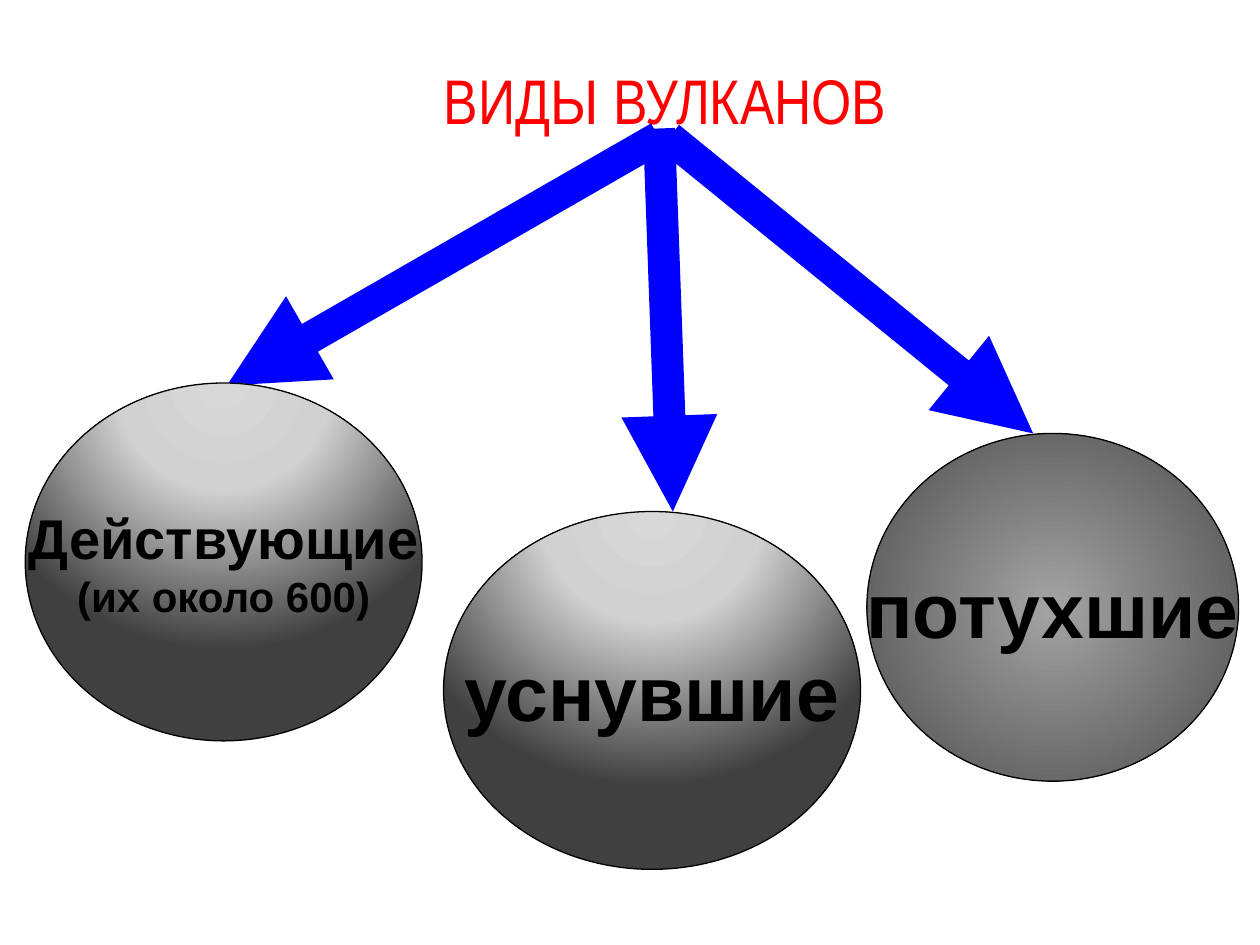
from lxml import etree
from pptx import Presentation
from pptx import util as u
from pptx.dml.color import RGBColor
from pptx.enum import shapes, text
from pptx.oxml import parse_xml
from pptx.oxml.ns import qn, nsdecls

TITLE = "ВИДЫ ВУЛКАНОВ"
BLUE, RED, BLACK = "0000FF", "FF0000", "000000"

# Gradients: stops (percent, colour) and focus (left, top, right, bottom)
GLOSS = ([(0, "D8D8D8"), (40, "D1D1D1"), (100, "404040")], (50, -80, 50, 180))
DULL = ([(0, "A4A4A4"), (100, "4C4C4C")], (50, 50, 50, 50))

# Each kind: place, gradient, lines of text with size, arrow from and to
KINDS = [
    ((0.2, 3.04, 3.15, 2.84), GLOSS,
     [("Действующие", 32), ("(их около 600)", 24)], (5.23, 1.09, 1.8, 3.06)),
    ((3.52, 4.06, 3.31, 2.84), GLOSS,
     [("уснувшие", 44)], (5.23, 1.02, 5.34, 4.06)),
    ((6.88, 3.44, 2.95, 2.76), DULL,
     [("потухшие", 44)], (5.31, 1.09, 8.2, 3.44)),
]


def rgb(code):
    return RGBColor.from_string(code)


def inches(nums):
    return [u.Inches(n) for n in nums]


def write(frame, lines, face, color, bold=None):
    frame.word_wrap = False
    frame.text = "\n".join(line for line, size in lines)
    for para, (line, size) in zip(frame.paragraphs, lines):
        para.alignment = text.PP_ALIGN.CENTER
        font = para.runs[0].font
        font.name, font.size, font.bold = face, u.Pt(size), bold
        font.color.rgb = rgb(color)


def shade(shape, stops, focus):
    marks = "".join(f'<a:gs pos="{pos * 1000}"><a:srgbClr val="{code}"/></a:gs>'
                    for pos, code in stops)
    sides = " ".join(f'{side}="{n * 1000}"' for side, n in zip("ltrb", focus))
    fill = parse_xml(
        f'<a:gradFill rotWithShape="1" {nsdecls("a")}><a:gsLst>{marks}</a:gsLst>'
        f'<a:path path="circle"><a:fillToRect {sides}/></a:path></a:gradFill>')
    shape._element.spPr.find(qn("a:prstGeom")).addnext(fill)


def ball(place, grad, lines):
    oval = slide.shapes.add_shape(shapes.MSO_SHAPE.OVAL, *inches(place))
    oval.shadow.inherit = False
    shade(oval, *grad)
    oval.line.color.rgb = rgb(BLACK)
    oval.line.width = u.Pt(0.75)
    oval.text_frame.vertical_anchor = text.MSO_ANCHOR.MIDDLE
    write(oval.text_frame, lines, "Arial", BLACK, True)


def arrow(ends):
    link = slide.shapes.add_connector(shapes.MSO_CONNECTOR.STRAIGHT, *inches(ends))
    link.line.color.rgb = rgb(BLUE)
    link.line.width = u.Pt(18.25)
    etree.SubElement(link.line._get_or_add_ln(), qn("a:tailEnd"), type="triangle")
    etree.SubElement(link._element.spPr, qn("a:effectLst"))


deck = Presentation()
deck.slide_width, deck.slide_height = inches((10, 7.5))
slide = deck.slides.add_slide(deck.slide_layouts[6])

# Title with a thin outline
head = slide.shapes.add_textbox(*inches((1.38, 0.44, 7.8, 0.62))).text_frame
write(head, [(TITLE, 36)], "Arial Narrow", RED)
edge = parse_xml(f'<a:ln w="{u.Pt(1.5)}" {nsdecls("a")}><a:solidFill>'
                 f'<a:srgbClr val="{BLACK}"/></a:solidFill></a:ln>')
head.paragraphs[0].runs[0]._r.get_or_add_rPr().insert(0, edge)

# Balls, each with its arrow; the first arrow lies beneath its ball
(place, grad, lines, ends), *rest = KINDS
arrow(ends)
ball(place, grad, lines)
for place, grad, lines, ends in rest:
    ball(place, grad, lines)
for *_, ends in rest:
    arrow(ends)

deck.save("out.pptx")
